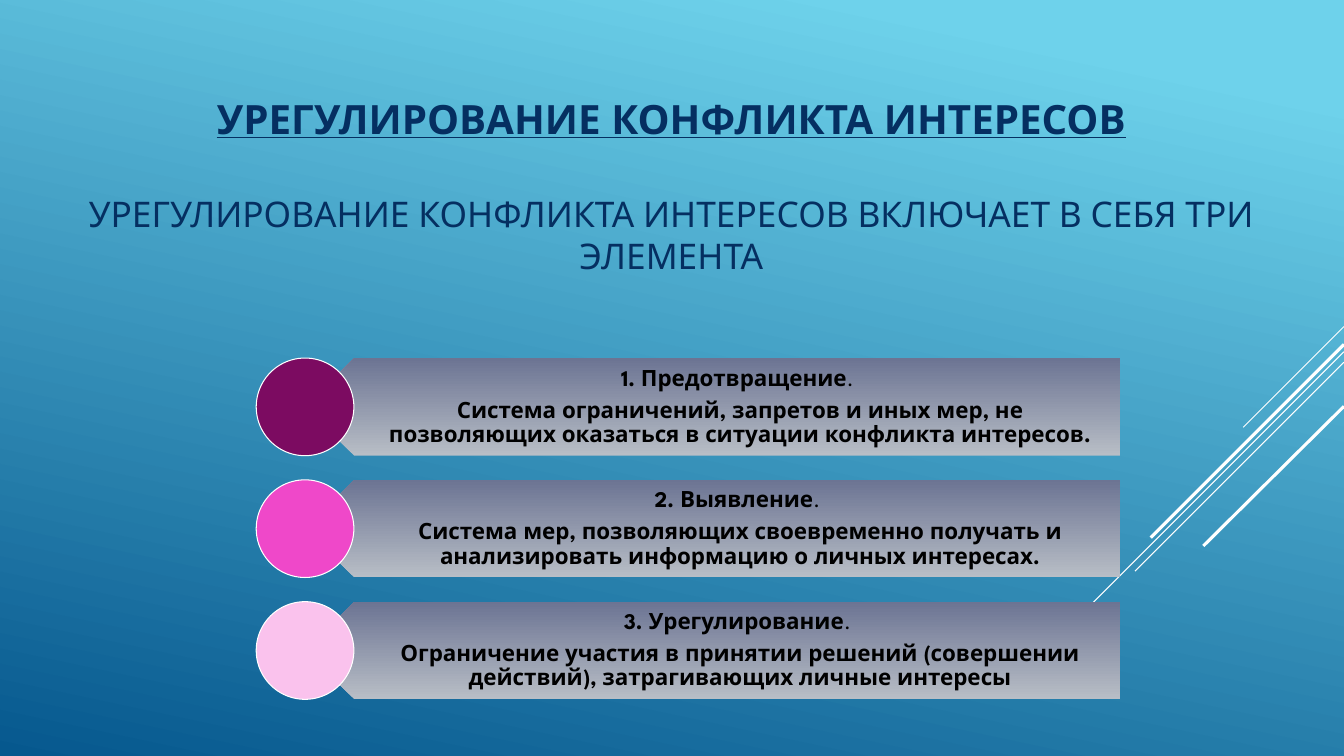
from dataclasses import dataclass

import lxml.etree
import pptx
import pptx.dml.color
import pptx.dml.fill
import pptx.enum.shapes
import pptx.enum.text
import pptx.oxml.ns
import pptx.shapes.autoshape
import pptx.slide
import pptx.text.text
import pptx.util

PX = 9525
FONT = "League Spartan"
NAVY, BLACK, WHITE = "052F61", "000000", "FFFFFF"
ROW_TOP, ROW_PITCH, ROW_HEIGHT = 341, 116, 93


@dataclass
class Ray:
    x: int
    y: int
    right_y: int
    width: float


@dataclass
class Element:
    name: str
    description: str
    circle_color: str


RAYS = [
    Ray(1184, 407, 311, 0.75),
    Ray(967, 648, 335, 0.75),
    Ray(1081, 544, 345, 0.75),
    Ray(1096, 512, 328, 2.25),
    Ray(1146, 520, 387, 2.25),
]

ELEMENTS = [
    Element(
        "1. Предотвращение",
        "Система ограничений, запретов и иных мер, не позволяющих оказаться "
        "в ситуации конфликта интересов.",
        "7C0B61",
    ),
    Element(
        "2. Выявление",
        "Система мер, позволяющих своевременно получать и анализировать "
        "информацию о личных интересах.",
        "EF48C9",
    ),
    Element(
        "3. Урегулирование",
        "Ограничение участия в принятии решений (совершении действий), "
        "затрагивающих личные интересы",
        "FAC2ED",
    ),
]


def px(length: int) -> pptx.util.Emu:
    return pptx.util.Emu(length * PX)


def rgb(color: str) -> pptx.dml.color.RGBColor:
    return pptx.dml.color.RGBColor.from_string(color)


def set_gradient(fill: pptx.dml.fill.FillFormat, angle: int,
                 stops: list[tuple[float, str]]) -> None:
    """Apply a linear gradient; the angle runs counter-clockwise."""
    fill.gradient()
    fill.gradient_angle = angle
    for stop, (position, color) in zip(fill.gradient_stops, stops):
        stop.position = position
        stop.color.rgb = rgb(color)


def add_ray(page: pptx.slide.Slide, ray: Ray) -> None:
    line = page.shapes.add_connector(
        pptx.enum.shapes.MSO_CONNECTOR.STRAIGHT,
        px(1280), px(ray.right_y), px(ray.x), px(ray.y))
    line.line.color.rgb = rgb(WHITE)
    line.line.width = pptx.util.Pt(ray.width)
    properties = line._element.find(pptx.oxml.ns.qn("p:spPr"))
    lxml.etree.SubElement(properties, pptx.oxml.ns.qn("a:effectLst"))


def add_shape(page: pptx.slide.Slide, kind: pptx.enum.shapes.MSO_SHAPE, left: int,
              top: int, width: int) -> pptx.shapes.autoshape.Shape:
    shape = page.shapes.add_shape(kind, px(left), px(top), px(width), px(ROW_HEIGHT))
    shape.shadow.inherit = False
    return shape


def add_text_box(page: pptx.slide.Slide, left: int, top: int, width: int, height: int,
                 insets: tuple[int, int, int, int]) -> pptx.text.text.TextFrame:
    """Add a wrapping box with left, top, right and bottom insets."""
    frame = page.shapes.add_textbox(px(left), px(top), px(width), px(height)).text_frame
    frame.word_wrap = True
    (frame.margin_left, frame.margin_top,
     frame.margin_right, frame.margin_bottom) = map(px, insets)
    return frame


def format_span(span: pptx.text.text._Run, size: float, color: str, bold: bool) -> None:
    span.font.name = FONT
    span.font.size = pptx.util.Pt(size)
    span.font.bold = bold
    span.font.color.rgb = rgb(color)


def add_title(page: pptx.slide.Slide) -> None:
    frame = add_text_box(page, 64, 47, 1151, 213, (10, 43, 10, 5))
    frame.text = ("УРЕГУЛИРОВАНИЕ КОНФЛИКТА ИНТЕРЕСОВ\n"
                  "УРЕГУЛИРОВАНИЕ КОНФЛИКТА ИНТЕРЕСОВ ВКЛЮЧАЕТ В СЕБЯ ТРИ ЭЛЕМЕНТА")
    heading, subtitle = frame.paragraphs
    for para in (heading, subtitle):
        para.alignment = pptx.enum.text.PP_ALIGN.CENTER
    heading.space_after = pptx.util.Pt(35)
    format_span(heading.runs[0], 28.8, NAVY, True)
    heading.runs[0].font.underline = True
    format_span(subtitle.runs[0], 25.2, NAVY, False)


def add_element(page: pptx.slide.Slide, element: Element, top: int) -> None:
    plate = add_shape(page, pptx.enum.shapes.MSO_SHAPE.PENTAGON, 291, top, 776)
    plate.rotation = 180
    set_gradient(plate.fill, 270, [(0, "B8BEC6"), (1, "6C7493")])
    plate.line.fill.background()

    frame = add_text_box(page, 314, top, 753, ROW_HEIGHT, (41, 7, 12, 7))
    frame.vertical_anchor = pptx.enum.text.MSO_ANCHOR.MIDDLE
    frame.text = f"{element.name}\n{element.description}"
    name, description = frame.paragraphs
    for para in (name, description):
        para.alignment = pptx.enum.text.PP_ALIGN.CENTER
        para.line_spacing = 0.9
        para.space_after = pptx.util.Pt(5.6)
        format_span(para.runs[0], 16, BLACK, True)
    period = name.add_run()
    period.text = ". "
    format_span(period, 16, BLACK, False)

    circle = add_shape(page, pptx.enum.shapes.MSO_SHAPE.OVAL, 244, top, ROW_HEIGHT)
    circle.fill.solid()
    circle.fill.fore_color.rgb = rgb(element.circle_color)
    circle.line.color.rgb = rgb(WHITE)
    circle.line.width = pptx.util.Pt(0.75)


def main() -> None:
    deck = pptx.Presentation()
    deck.slide_width, deck.slide_height = px(1280), px(720)
    page = deck.slides.add_slide(deck.slide_layouts[6])
    set_gradient(page.background.fill, 258, [(0.1, "6ED2EB"), (1, "06588E")])
    for ray in RAYS:
        add_ray(page, ray)
    add_title(page)
    for row, element in enumerate(ELEMENTS):
        add_element(page, element, ROW_TOP + row * ROW_PITCH)
    deck.save("out.pptx")


if __name__ == "__main__":
    main()
